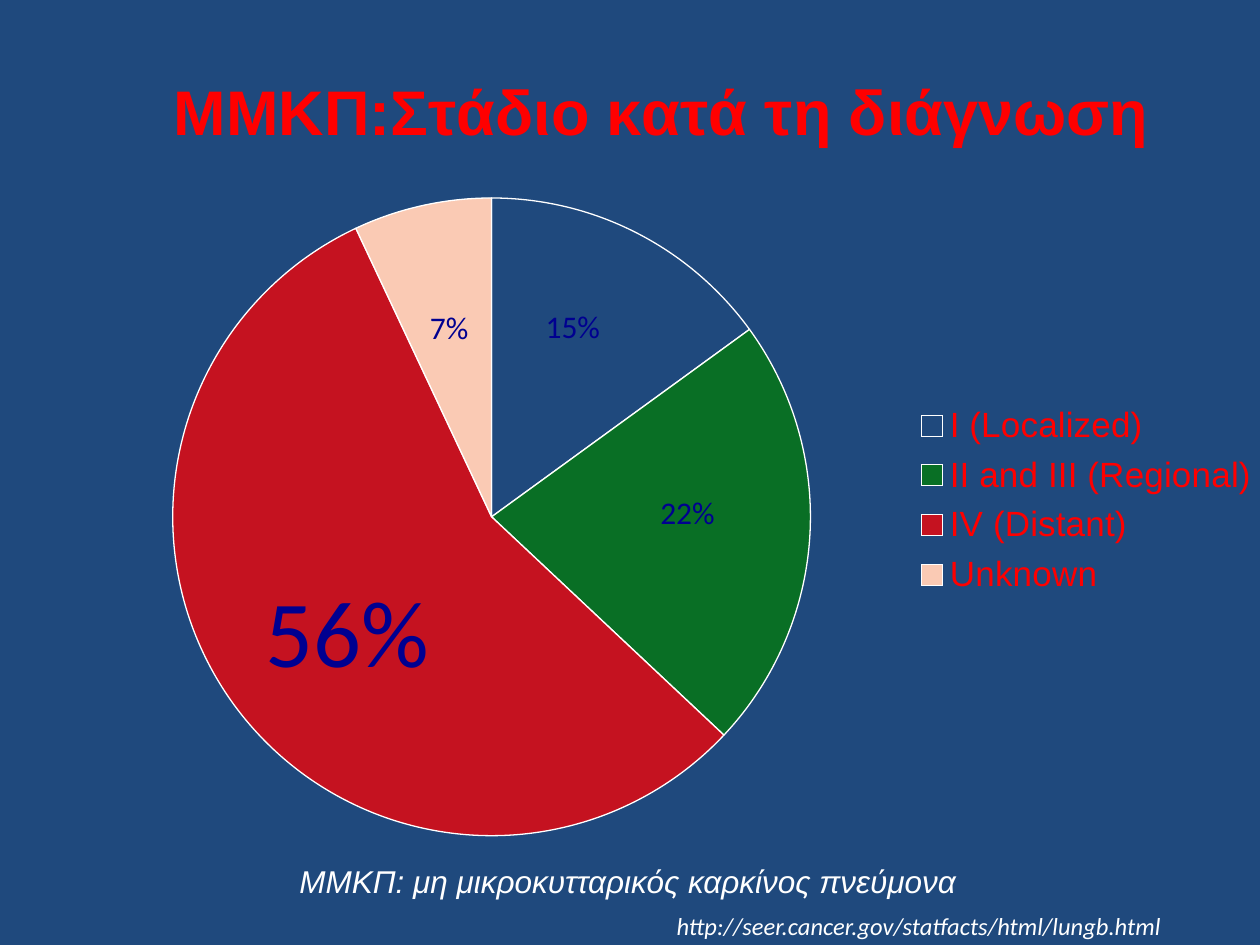
from lxml import etree
from pptx import Presentation
from pptx.chart.data import CategoryChartData
from pptx.dml.color import RGBColor
from pptx.enum.chart import XL_CHART_TYPE, XL_LABEL_POSITION, XL_LEGEND_POSITION
from pptx.enum.text import MSO_AUTO_SIZE
from pptx.oxml.ns import qn
from pptx.util import Pt

PIE = XL_CHART_TYPE.PIE
CENTER = XL_LABEL_POSITION.CENTER
RIGHT = XL_LEGEND_POSITION.RIGHT
FIT_SHAPE = MSO_AUTO_SIZE.SHAPE_TO_FIT_TEXT

NAVY = RGBColor(0x1F, 0x49, 0x7D)
WHITE = RGBColor(0xFF, 0xFF, 0xFF)
RED = RGBColor(0xFF, 0x00, 0x00)
GREEN = RGBColor(0x00, 0x80, 0x00)
PEACH = RGBColor(0xFA, 0xCA, 0xB4)
INK = RGBColor(0x00, 0x00, 0x90)

# stage, percent, fill, opacity, label size, label shift from the slice centre
STAGES = [
    ("I (Localized)", 15, None, 100, 18, (0.007, -0.054)),
    ("II and III (Regional)", 22, GREEN, 70, 18, (0.029, -0.015)),
    ("IV (Distant)", 56, RED, 74, 54, (-0.012, 0.028)),
    ("Unknown", 7, PEACH, 100, 18, (-0.006, -0.038)),
]


def style_font(font, color, **values):
    font.color.rgb = color
    for name, value in values.items():
        setattr(font, name, value)


def set_layout(parent, index, **values):
    """Give a chart part a manual layout in fractions of the chart."""
    for old in parent.findall(qn("c:layout")):
        parent.remove(old)
    layout = etree.Element(qn("c:layout"))
    manual = etree.SubElement(layout, qn("c:manualLayout"))
    for name, value in values.items():
        etree.SubElement(manual, qn(f"c:{name}"), val=str(value))
    parent.insert(index, layout)


class Deck:
    body_font = "Calibri"
    head_font = "Arial"

    def __init__(self, width, height):
        self.prs = Presentation()
        self.prs.slide_width, self.prs.slide_height = Pt(width), Pt(height)
        self.s = self.prs.slides.add_slide(self.prs.slide_layouts[6])
        fill = self.s.background.fill
        fill.solid()
        fill.fore_color.rgb = NAVY

    def text(self, text, box, size, font, wrap):
        sp = self.s.shapes.add_textbox(*map(Pt, box))
        tf = sp.text_frame
        tf.word_wrap = wrap
        tf.auto_size = FIT_SHAPE
        r = tf.paragraphs[0].add_run()
        r.text = text
        style_font(r.font, WHITE, size=Pt(size), name=font, italic=True)

    def pie(self, title, stages, box):
        data = CategoryChartData()
        data.categories = [stage[0] for stage in stages]
        data.add_series("Series 1", [stage[1] for stage in stages])
        chart = self.s.shapes.add_chart(PIE, *map(Pt, box), data).chart
        style_font(chart.font, WHITE, size=Pt(18), name=self.body_font)
        self.title(chart, title)
        self.legend(chart)
        plot = chart.plots[0]
        plot.vary_by_categories = True
        series = plot.series[0]
        labels = series.data_labels
        labels.show_value, labels.show_percentage = False, True
        labels.number_format, labels.number_format_is_linked = "0%", False
        style_font(labels.font, INK, size=Pt(18), name=self.body_font)
        for i, (_, _, color, opacity, size, shift) in enumerate(stages):
            self.slice(series, i, color, opacity)
            self.label(series, i, size, shift)
        plot_area = chart.element.find(".//" + qn("c:plotArea"))
        set_layout(plot_area, 0, layoutTarget="inner", xMode="edge", yMode="edge",
                   x=0.136, y=0.188, w=0.502, h=0.732)

    def title(self, chart, text):
        chart.has_title = True
        r = chart.chart_title.text_frame.paragraphs[0].add_run()
        r.text = text
        style_font(r.font, RED, size=Pt(36), name=self.head_font, bold=True)
        set_layout(chart.element.find(".//" + qn("c:title")), 1,
                   xMode="edge", yMode="edge", x=0.128, y=0.03)

    def legend(self, chart):
        chart.has_legend = True
        legend = chart.legend
        legend.position = RIGHT
        legend.include_in_layout = False
        style_font(legend.font, RED, size=Pt(20), name=self.head_font)
        set_layout(chart.element.find(".//" + qn("c:legend")), 1,
                   xMode="edge", yMode="edge", x=0.715, y=0.415, w=0.28, h=0.24)

    def slice(self, series, i, color, opacity):
        fmt = series.points[i].format
        fmt.line.color.rgb = WHITE
        fmt.line.width = Pt(0.75)
        if color is None:
            fmt.fill.background()
            return
        fmt.fill.solid()
        fmt.fill.fore_color.rgb = color
        if opacity < 100:
            path = f'c:dPt[c:idx/@val="{i}"]/c:spPr/a:solidFill/a:srgbClr'
            clr = series._element.xpath(path)[0]
            etree.SubElement(clr, qn("a:alpha"), val=str(opacity * 1000))

    def label(self, series, i, size, shift):
        label = series.points[i].data_label
        style_font(label.font, INK, size=Pt(size), name=self.body_font)
        label.position = CENTER
        node = series._element.xpath(f'c:dLbls/c:dLbl[c:idx/@val="{i}"]')[0]
        node.find(qn("c:showVal")).set("val", "0")
        node.find(qn("c:showPercent")).set("val", "1")
        set_layout(node, 1, x=shift[0], y=shift[1])
        number = etree.Element(qn("c:numFmt"), formatCode="0%", sourceLinked="0")
        node.insert(2, number)


def main():
    deck = Deck(720, 540)
    deck.pie("ΜΜΚΠ:Στάδιο κατά τη διάγνωση", STAGES, (0, 19.5, 726, 498))
    deck.text("http://seer.cancer.gov/statfacts/html/lungb.html",
              (379.5, 517, 301, 24.5), 14, deck.body_font, False)
    deck.text("ΜΜΚΠ: μη μικροκυτταρικός καρκίνος πνεύμονα",
              (164, 489, 516, 29), 18, deck.head_font, True)
    deck.prs.save("out.pptx")


if __name__ == "__main__":
    main()
